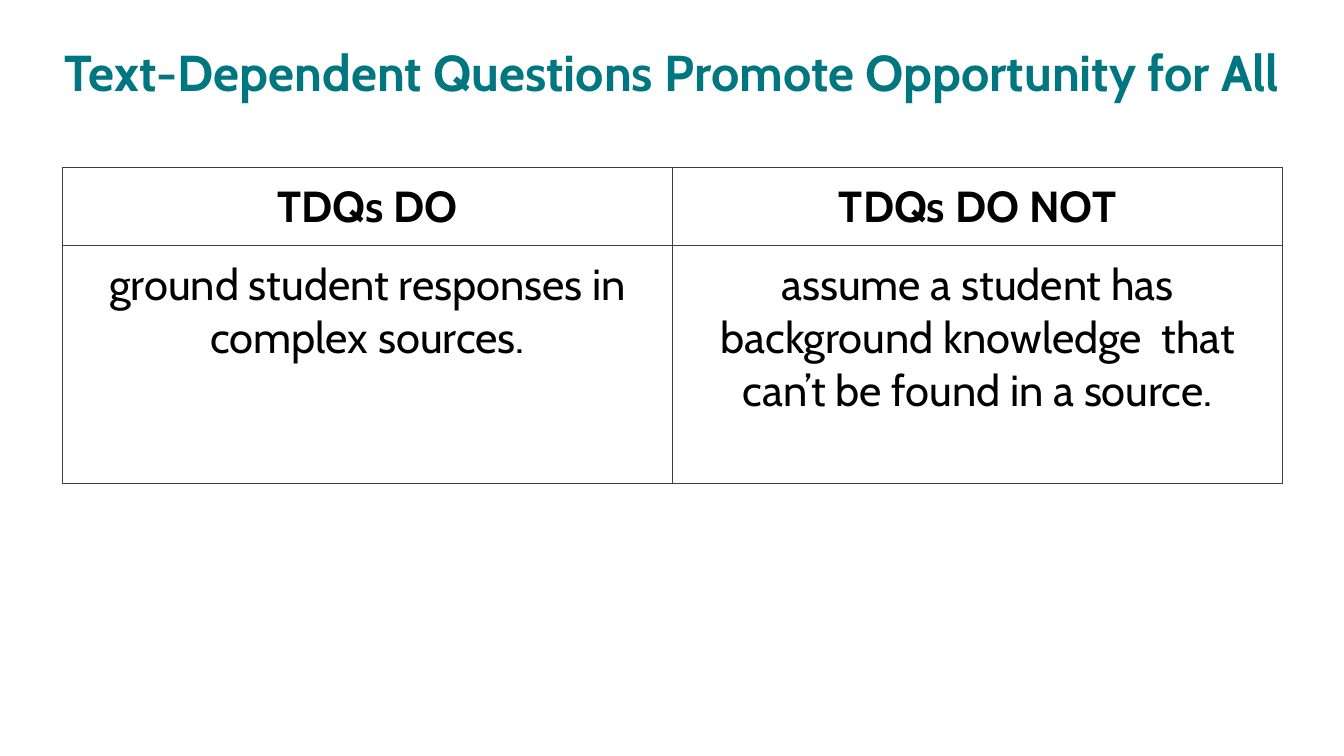
"""Build the slide on what text-dependent questions do and do not do."""
from lxml import etree
from pptx import Presentation
from pptx.dml.color import RGBColor
from pptx.enum.text import MSO_ANCHOR, PP_ALIGN
from pptx.oxml import parse_xml
from pptx.oxml.ns import nsdecls
from pptx.util import Inches, Pt

COLORS = {"title": "007780", "text": "000000", "border": "3F3F3F"}
ROWS = [
    ["TDQs DO", "TDQs DO NOT"],
    ["ground student responses in complex sources.",
     "assume a student has background knowledge  that can’t be found in a source."],
]


def write(tf, text, size, color, bold):
    tf.text = text
    p = tf.paragraphs[0]
    p.alignment = PP_ALIGN.CENTER
    font = p.runs[0].font
    font.name = "Cabin"
    font.size = Pt(size)
    font.bold = bold
    font.color.rgb = RGBColor.from_string(COLORS[color])


prs = Presentation()
prs.slide_width, prs.slide_height = Inches(13.33), Inches(7.5)
s = prs.slides.add_slide(prs.slide_layouts[6])

title = s.shapes.add_textbox(Inches(0.36), Inches(0.36), Inches(12.61), Inches(1.04))
title.text_frame.word_wrap = True
title.text_frame.vertical_anchor = MSO_ANCHOR.TOP
write(title.text_frame, "Text-Dependent Questions Promote Opportunity for All", 36, "title", True)

table = s.shapes.add_table(2, 2, Inches(0.62), Inches(1.66), Inches(12.1), Inches(3.14)).table
table.first_row = table.horz_banding = False
for row, height in zip(table.rows, (0.78, 2.36)):
    row.height = Inches(height)

for i, texts in enumerate(ROWS):
    for j, text in enumerate(texts):
        cell = table.cell(i, j)
        cell.margin_left = cell.margin_right = Inches(0.13)
        cell.margin_top = cell.margin_bottom = Inches(0.13)
        cell.vertical_anchor = MSO_ANCHOR.TOP
        write(cell.text_frame, text, 31, "text", i == 0)
        cell.fill.background()
        tc_pr = cell._tc.get_or_add_tcPr()
        for k, side in enumerate(("lnL", "lnR", "lnT", "lnB")):
            tc_pr.insert(k, parse_xml(
                f'<a:{side} {nsdecls("a")} w="{Pt(0.75)}"><a:solidFill>'
                f'<a:srgbClr val="{COLORS["border"]}"/></a:solidFill></a:{side}>'))

prs.save("out.pptx")
